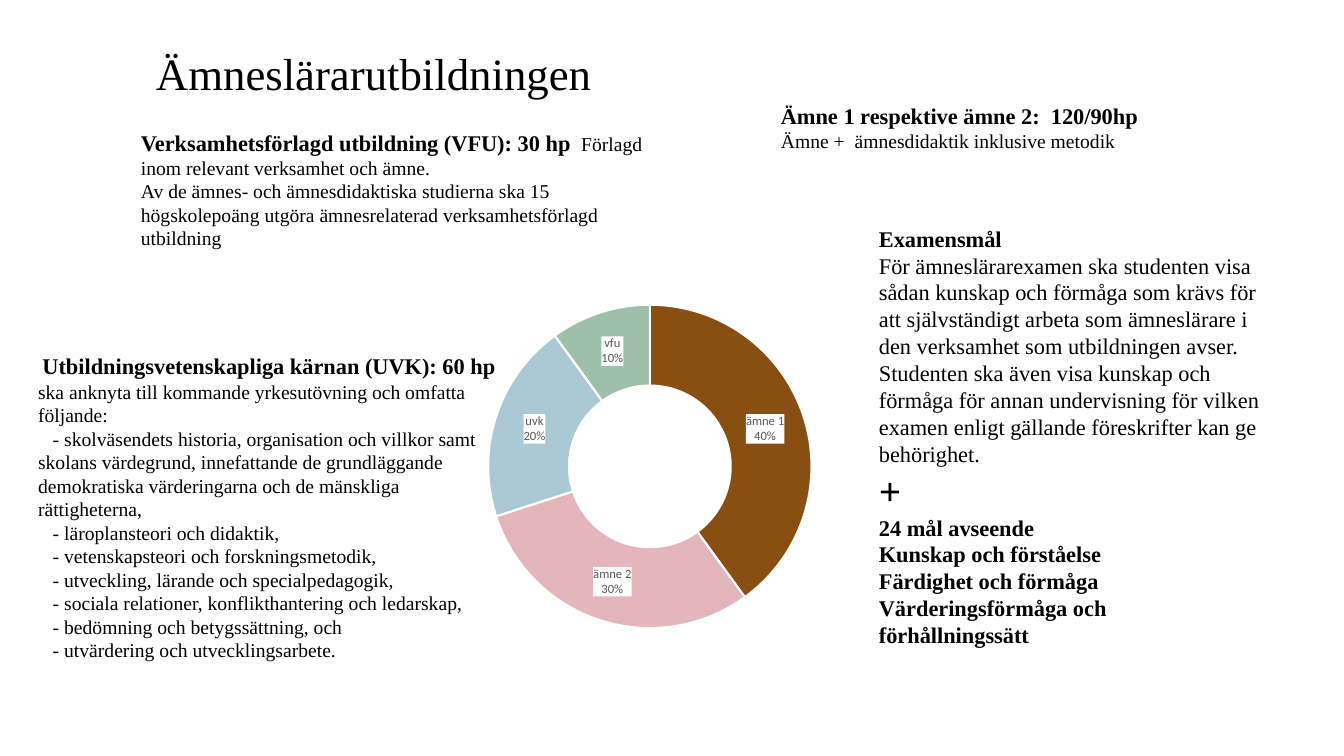
"""Build a slide on the parts of the Swedish subject teacher programme."""
from dataclasses import dataclass

from lxml import etree
from pptx import Presentation
from pptx.chart.data import CategoryChartData
from pptx.dml.color import RGBColor
from pptx.enum.chart import XL_CHART_TYPE
from pptx.oxml import parse_xml
from pptx.oxml.ns import qn
from pptx.slide import Slide
from pptx.util import Cm, Pt

DOUGHNUT = XL_CHART_TYPE.DOUGHNUT
CHART_NS = ('xmlns:c="http://schemas.openxmlformats.org/drawingml/2006/chart" '
            'xmlns:a="http://schemas.openxmlformats.org/drawingml/2006/main"')


@dataclass(frozen=True)
class Theme:
    """Colours, fonts and type sizes of the slide."""
    text: str = "000000"
    label: str = "595959"
    white: str = "FFFFFF"
    text_font: str = "Times New Roman"
    chart_font: str = "Calibri"
    title: int = 32
    plus: int = 28
    heading: int = 16
    body: int = 14
    chart: int = 10
    chart_label: int = 9


THEME = Theme()


@dataclass(frozen=True)
class Run:
    """A stretch of text in one size and weight."""
    text: str
    size: int = THEME.body
    bold: bool = False


@dataclass(frozen=True)
class Line:
    """A paragraph with its first-line indent in centimetres."""
    runs: tuple[Run, ...]
    indent: float = 0


@dataclass(frozen=True)
class Box:
    """A text block, placed in centimetres."""
    left: float
    top: float
    width: float
    height: float
    lines: tuple[Line, ...]


@dataclass(frozen=True)
class Share:
    """One part of the programme in the doughnut."""
    name: str
    percent: int
    colour: str


def heading(text: str, indent: float = 0) -> Line:
    """Return a bold heading line."""
    return Line((Run(text, THEME.heading, True),), indent)


def body(text: str, size: int = THEME.body, indent: float = 0) -> Line:
    """Return a plain line."""
    return Line((Run(text, size),), indent)


CORE_TOPICS = (
    "skolväsendets historia, organisation och villkor samt skolans värdegrund, "
    "innefattande de grundläggande demokratiska värderingarna och de mänskliga rättigheterna,",
    "läroplansteori och didaktik,",
    "vetenskapsteori och forskningsmetodik,",
    "utveckling, lärande och specialpedagogik,",
    "sociala relationer, konflikthantering och ledarskap,",
    "bedömning och betygssättning, och",
    "utvärdering och utvecklingsarbete.",
)

BOXES = (
    Box(3.68, 1.02, 14.78, 1.63, (body("Ämneslärarutbildningen", THEME.title),)),
    Box(3.3, 3.12, 13.28, 6, (
        Line((Run("Verksamhetsförlagd utbildning (VFU): 30 hp ", THEME.heading, True),
              Run(" Förlagd inom relevant verksamhet och ämne."))),
        body("Av de ämnes- och ämnesdidaktiska studierna ska 15 högskolepoäng utgöra "
             "ämnesrelaterad verksamhetsförlagd utbildning"),
    )),
    Box(0.71, 8.76, 12.19, 8.71, (
        heading("Utbildningsvetenskapliga kärnan (UVK): 60 hp", 0.11),
        body("ska anknyta till kommande yrkesutövning och omfatta följande:"),
        *(body(f"- {topic}", indent=0.37) for topic in CORE_TOPICS),
    )),
    Box(21.9, 5.54, 10.16, 11.63, (
        heading("Examensmål"),
        body("För ämneslärarexamen ska studenten visa sådan kunskap och förmåga som krävs för "
             "att självständigt arbeta som ämneslärare i den verksamhet som utbildningen avser.",
             THEME.heading),
        body("Studenten ska även visa kunskap och förmåga för annan undervisning för vilken "
             "examen enligt gällande föreskrifter kan ge behörighet.", THEME.heading),
        Line((Run("+", THEME.plus, True),)),
        heading("24 mål avseende"),
        heading("Kunskap och förståelse"),
        heading("Färdighet och förmåga"),
        heading("Värderingsförmåga och förhållningssätt"),
    )),
    Box(19.43, 2.44, 11.13, 1.55, (
        heading("Ämne 1 respektive ämne 2:  120/90hp"),
        body("Ämne +  ämnesdidaktik inklusive metodik"),
    )),
)

SHARES = (
    Share("ämne 1", 40, "894E11"),
    Share("ämne 2", 30, "E3B6BB"),
    Share("uvk", 20, "ABC9D4"),
    Share("vfu", 10, "9EC0AA"),
)


def add_box(slide: Slide, box: Box) -> None:
    """Add a wrapped text block to the slide."""
    frame = slide.shapes.add_textbox(
        Cm(box.left), Cm(box.top), Cm(box.width), Cm(box.height)).text_frame
    frame.word_wrap = True
    for index, line in enumerate(box.lines):
        paragraph = frame.add_paragraph() if index else frame.paragraphs[0]
        if line.indent:
            paragraph._p.get_or_add_pPr().set("indent", str(Cm(line.indent)))
        for part in line.runs:
            run = paragraph.add_run()
            run.text = part.text
            run.font.name = THEME.text_font
            run.font.size = Pt(part.size)
            run.font.bold = part.bold
            run.font.color.rgb = RGBColor.from_string(THEME.text)


def add_doughnut(slide: Slide) -> None:
    """Add the doughnut of programme shares."""
    data = CategoryChartData()
    data.categories = [share.name for share in SHARES]
    data.add_series("Series 1", [share.percent for share in SHARES])
    chart = slide.shapes.add_chart(
        DOUGHNUT, Cm(11.46), Cm(6.3), Cm(14.05), Cm(10.29), data).chart
    chart.has_title = False
    chart.has_legend = False
    chart.font.name = THEME.chart_font
    chart.font.size = Pt(THEME.chart)
    chart.font.color.rgb = RGBColor.from_string(THEME.text)

    plot = chart.plots[0]
    plot.vary_by_categories = True
    plot._element.find(qn("c:holeSize")).set("val", "75")
    series = plot.series[0]
    for index, share in enumerate(SHARES):
        slice_format = series.points[index].format
        slice_format.fill.solid()
        slice_format.fill.fore_color.rgb = RGBColor.from_string(share.colour)
        slice_format.line.color.rgb = RGBColor.from_string(THEME.white)
        slice_format.line.width = Pt(1.5)

    labels = series.data_labels
    labels.show_category_name = True
    labels.show_percentage = True
    labels.show_value = False
    labels.font.name = THEME.chart_font
    labels.font.size = Pt(THEME.chart_label)
    labels.font.color.rgb = RGBColor.from_string(THEME.label)
    label_xml = labels._element
    label_xml.find(qn("c:txPr")).addprevious(parse_xml(
        f'<c:spPr {CHART_NS}><a:solidFill><a:srgbClr val="{THEME.white}"/></a:solidFill></c:spPr>'))
    separator = etree.Element(qn("c:separator"))
    separator.text = "\n"
    label_xml.find(qn("c:showBubbleSize")).addnext(separator)

    plot_area = plot._element.getparent()
    for layout in plot_area.findall(qn("c:layout")):
        plot_area.remove(layout)
    place = {"x": 0.06, "y": 0.08, "w": 0.58, "h": 0.94}
    modes = '<c:layoutTarget val="inner"/><c:xMode val="edge"/><c:yMode val="edge"/>'
    sides = "".join(f'<c:{side} val="{value}"/>' for side, value in place.items())
    plot_area.insert(0, parse_xml(
        f"<c:layout {CHART_NS}><c:manualLayout>{modes}{sides}</c:manualLayout></c:layout>"))


def main() -> None:
    """Build and save the slide."""
    deck = Presentation()
    deck.slide_width, deck.slide_height = Cm(33.87), Cm(19.05)
    slide = deck.slides.add_slide(deck.slide_layouts[6])
    add_doughnut(slide)
    for box in BOXES:
        add_box(slide, box)
    deck.save("out.pptx")


if __name__ == "__main__":
    main()
